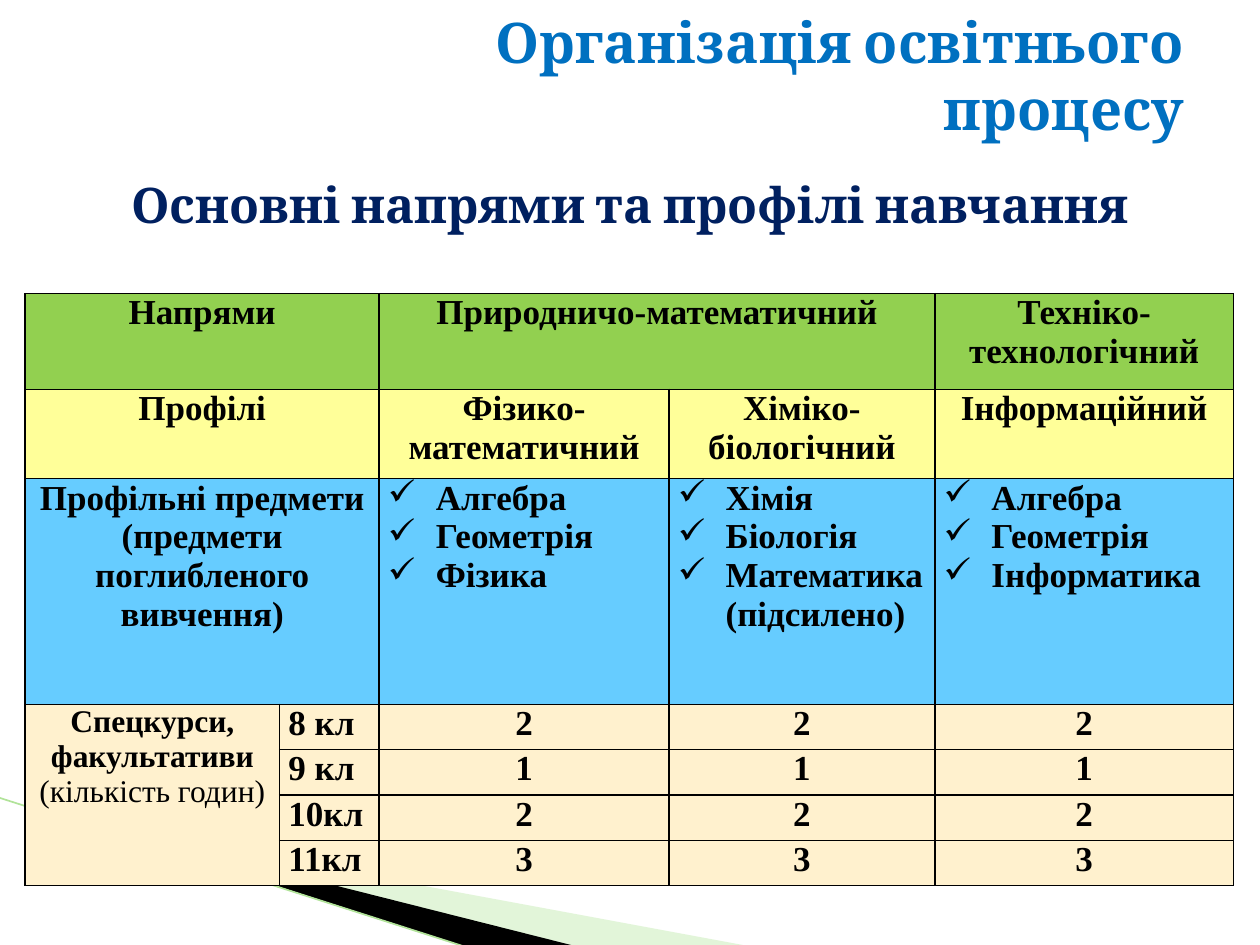
from lxml.etree import SubElement
from pptx import Presentation
from pptx.dml.color import RGBColor
from pptx.enum.shapes import MSO_CONNECTOR
from pptx.enum.text import MSO_ANCHOR, MSO_AUTO_SIZE, PP_ALIGN
from pptx.oxml.ns import qn
from pptx.util import Inches, Pt

BLACK = "000000"
COLS = [2.02, 0.79, 2.3, 2.11, 2.37]
ROWS = [0.76, 0.71, 1.79] + [0.36] * 4
FILLS = ["92D050", "FFFF99", "66CCFF"] + ["FFF1CE"] * 4
# Cells by (row, column); a list makes a ticked list
TEXT = {
    (0, 0): "Напрями",
    (0, 2): "Природничо-математичний",
    (0, 4): "Техніко-технологічний",
    (1, 0): "Профілі",
    (1, 2): "Фізико-математичний",
    (1, 3): "Хіміко-біологічний",
    (1, 4): "Інформаційний",
    (2, 0): "Профільні предмети (предмети поглибленого вивчення)",
    (2, 2): ["Алгебра", "Геометрія", "Фізика"],
    (2, 3): ["Хімія", "Біологія", "Математика (підсилено)"],
    (2, 4): ["Алгебра", "Геометрія", "Інформатика"],
    (3, 0): "Спецкурси, факультативи\n(кількість годин)",
}
HOURS = [("8 кл", 2), ("9 кл", 1), ("10кл", 2), ("11кл", 3)]
MERGES = [(0, 0, 0, 1), (0, 2, 0, 3), (1, 0, 1, 1), (2, 0, 2, 1), (3, 0, 6, 0)]


def color(code):
    return RGBColor.from_string(code)


def style(par, face, size, code, align, bold=True):
    par.alignment = align
    for run in par.runs:
        font = run.font
        font.name, font.size, font.bold = face, Pt(size), bold
        font.color.rgb = color(code)


def heading(shape, box, text, size, code, align):
    shape.left, shape.top, shape.width, shape.height = map(Inches, box)
    frame = shape.text_frame
    frame.word_wrap = True
    frame.auto_size = MSO_AUTO_SIZE.NONE
    frame.vertical_anchor = MSO_ANCHOR.MIDDLE
    frame.text = text
    style(frame.paragraphs[0], "Cambria", size, code, align)


def wedge(slide, points, code, alpha=None):
    (x, y), *rest = [(Inches(a), Inches(b)) for a, b in points]
    pen = slide.shapes.build_freeform(x, y)
    pen.add_line_segments(rest, close=True)
    shape = pen.convert_to_shape()
    shape.shadow.inherit = False
    shape.line.fill.background()
    shape.fill.solid()
    shape.fill.fore_color.rgb = color(code)
    if alpha:
        tint = shape.fill._xPr.find(".//" + qn("a:srgbClr"))
        SubElement(tint, qn("a:alpha"), val=str(alpha * 1000))


def decor(slide):
    """Draw the swoosh at the foot of the slide."""
    wedge(slide, [(0.55, 6.51), (5.95, 7.51), (4.56, 7.51), (0.55, 6.5)],
          "B8E7A1", 40)
    wedge(slide, [(0.53, 6.49), (4.57, 7.51), (3.72, 7.52), (0.54, 6.5)], BLACK)
    ends = map(Inches, (-0.01, 6.33, 3.71, 7.52))
    line = slide.shapes.add_connector(MSO_CONNECTOR.STRAIGHT, *ends)
    line.line.color.rgb = color("B1E399")
    line.line.width = Pt(0.95)
    SubElement(line._element.spPr, qn("a:effectLst"))


def border(cell):
    props = cell._tc.get_or_add_tcPr()
    for side in ("lnL", "lnR", "lnT", "lnB"):
        edge = SubElement(props, qn("a:" + side), w=str(Pt(1)))
        SubElement(SubElement(edge, qn("a:solidFill")), qn("a:srgbClr"), val=BLACK)


def tick(par):
    props = par._p.get_or_add_pPr()
    props.set("marL", str(Inches(0.38)))
    props.set("indent", str(-Inches(0.38)))
    SubElement(props, qn("a:buChar"), char="✓")


def write(cell, text, left, size):
    ticked = isinstance(text, list)
    cell.text_frame.text = "\n".join(text) if ticked else text
    align = PP_ALIGN.LEFT if ticked or left else PP_ALIGN.CENTER
    for par in cell.text_frame.paragraphs:
        if ticked:
            tick(par)
        style(par, "Times New Roman", size, BLACK, align,
              par.text != "(кількість годин)")


def grid(slide, x, y):
    """Place the table of study profiles."""
    box = map(Inches, (x, y, sum(COLS), sum(ROWS)))
    table = slide.shapes.add_table(len(ROWS), len(COLS), *box).table
    table.first_row = table.horz_banding = False
    for col, width in zip(table.columns, COLS):
        col.width = Inches(width)
    for row, height in zip(table.rows, ROWS):
        row.height = Inches(height)

    text = dict(TEXT)
    for r, (grade, count) in enumerate(HOURS, 3):
        text[r, 1] = grade
        text.update({(r, c): str(count) for c in (2, 3, 4)})

    for r, code in enumerate(FILLS):
        for c in range(len(COLS)):
            cell = table.cell(r, c)
            cell.margin_left = cell.margin_right = Inches(0.07)
            cell.margin_top = cell.margin_bottom = 0
            border(cell)
            cell.fill.solid()
            cell.fill.fore_color.rgb = color(code)
            if (r, c) in text:
                write(cell, text[r, c], c == 1, 18 if (r, c) == (3, 0) else 20)
    for top, left, end, right in MERGES:
        table.cell(top, left).merge(table.cell(end, right))


def main():
    deck = Presentation()
    deck.slide_width, deck.slide_height = Inches(10), Inches(7.5)
    slide = deck.slides.add_slide(deck.slide_layouts[5])
    decor(slide)
    grid(slide, 0.2, 2.33)
    heading(slide.shapes.title, (2.87, 0.3, 6.63, 0.59),
            "Організація освітнього процесу", 32, "0070C0", PP_ALIGN.RIGHT)
    note = slide.shapes.add_textbox(0, 0, 0, 0)
    heading(note, (0.67, 1.32, 8.66, 0.59),
            "Основні напрями та профілі навчання", 28, "002060", PP_ALIGN.CENTER)
    deck.save("out.pptx")


if __name__ == "__main__":
    main()
